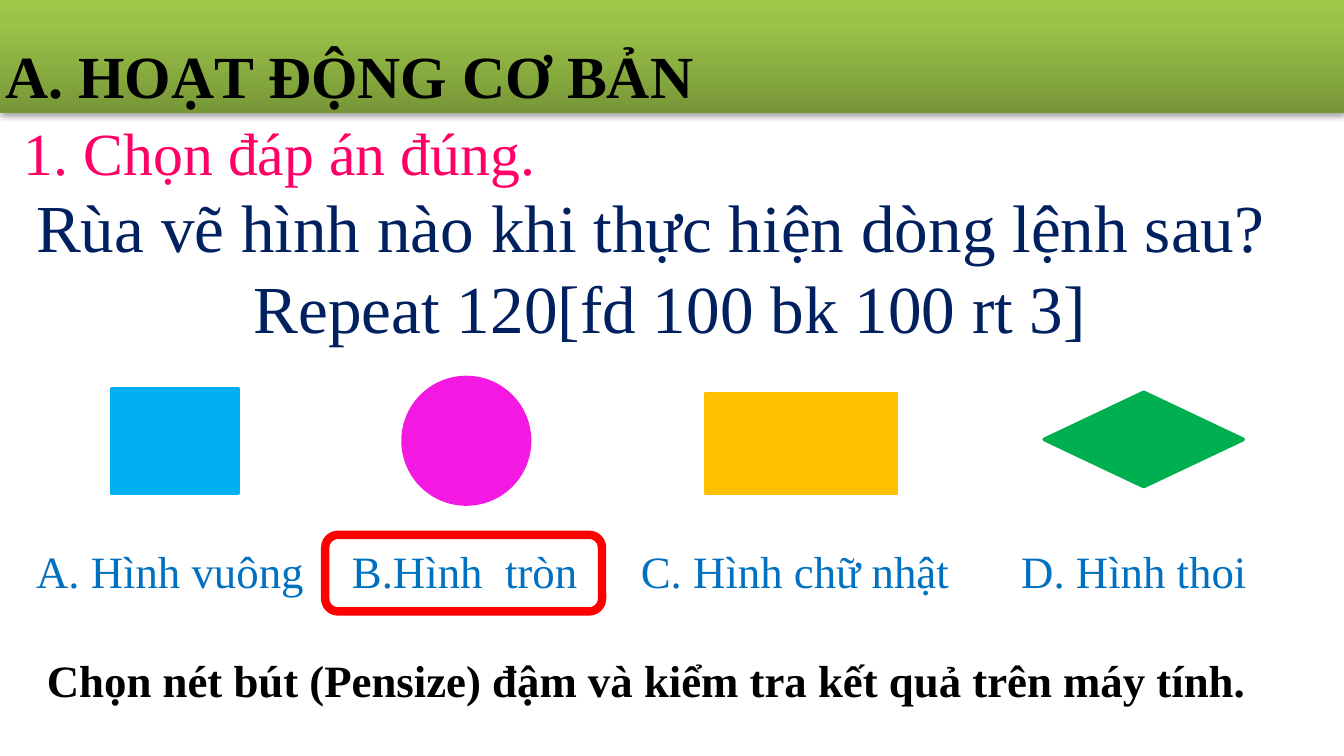
from dataclasses import dataclass

from lxml.etree import SubElement
from pptx import Presentation
from pptx.dml.color import RGBColor
from pptx.enum.shapes import MSO_SHAPE
from pptx.enum.text import MSO_ANCHOR, MSO_AUTO_SIZE, PP_ALIGN
from pptx.oxml import parse_xml
from pptx.oxml.ns import nsdecls, qn
from pptx.util import Inches, Pt


@dataclass(frozen=True)
class Theme:
    font: str = "Times New Roman"
    black: str = "000000"
    pink: str = "FF0066"
    navy: str = "002060"
    answer: str = "0070C0"
    highlight: str = "FF0000"
    square: str = "00B0F0"
    circle: str = "F319E3"
    rectangle: str = "FFC000"
    rhombus: str = "00B050"
    banner_stops: tuple = ((0, "779737"), (80, "9BC348"), (100, "9DC746"))
    heading_size: int = 32
    question_size: int = 36
    body_size: int = 24


THEME = Theme()


def write_text(frame, *lines, size, color, bold=False, line_spacing=None, indents=()):
    """Fill a text frame, one paragraph per line; indents are in inches."""
    for index, line in enumerate(lines):
        paragraph = frame.paragraphs[0] if index == 0 else frame.add_paragraph()
        paragraph.text = line
        paragraph.alignment = PP_ALIGN.LEFT
        if line_spacing:
            paragraph.line_spacing = line_spacing
        if index < len(indents):
            paragraph._p.get_or_add_pPr().set("marL", str(Inches(indents[index])))
        font = paragraph.font
        font.name, font.size, font.bold = THEME.font, Pt(size), bold
        font.color.rgb = RGBColor.from_string(color)


class SlideBuilder:
    def __init__(self, slide, theme):
        self.slide = slide
        self.theme = theme

    def title(self, text, left, top, width, height):
        title = self.slide.shapes.title
        title.left, title.top = Inches(left), Inches(top)
        title.width, title.height = Inches(width), Inches(height)
        frame = title.text_frame
        frame.margin_left = frame.margin_right = Inches(0.04)
        frame.margin_top = frame.margin_bottom = Inches(0.02)
        frame.vertical_anchor = MSO_ANCHOR.TOP
        frame.word_wrap = True
        frame.auto_size = MSO_AUTO_SIZE.SHAPE_TO_FIT_TEXT
        write_text(frame, text, size=self.theme.heading_size,
                   color=self.theme.black, bold=True, line_spacing=1.5)

    def text(self, *lines, left, top, width, height, wrap=True, **text_format):
        box = self.slide.shapes.add_textbox(
            Inches(left), Inches(top), Inches(width), Inches(height))
        box.text_frame.word_wrap = wrap
        box.text_frame.auto_size = MSO_AUTO_SIZE.SHAPE_TO_FIT_TEXT
        write_text(box.text_frame, *lines, **text_format)

    def shape(self, kind, left, top, width, height, fill=None, line=None, weight=2):
        shape = self.slide.shapes.add_shape(
            kind, Inches(left), Inches(top), Inches(width), Inches(height))
        shape.shadow.inherit = False
        if fill:
            shape.fill.solid()
            shape.fill.fore_color.rgb = RGBColor.from_string(fill)
        else:
            shape.fill.background()
        if line:
            shape.line.color.rgb = RGBColor.from_string(line)
            shape.line.width = Pt(weight)
        else:
            shape.line.fill.background()
        return shape

    def banner(self, width, height):
        banner = self.shape(MSO_SHAPE.RECTANGLE, 0, 0, width, height)
        properties = banner.element.spPr
        # Gradient running from the bottom edge to the top
        stops = "".join(
            f'<a:gs pos="{position * 1000}"><a:srgbClr val="{color}"/></a:gs>'
            for position, color in self.theme.banner_stops)
        gradient = parse_xml(
            f'<a:gradFill {nsdecls("a")} rotWithShape="1"><a:gsLst>{stops}</a:gsLst>'
            '<a:lin ang="16200000" scaled="0"/></a:gradFill>')
        properties.replace(properties.find(qn("a:noFill")), gradient)
        # Soft shadow below
        shadow = SubElement(
            properties.find(qn("a:effectLst")), qn("a:outerShdw"),
            blurRad=str(Pt(3.1)), dist=str(Pt(1.8)), dir="5400000", rotWithShape="0")
        color = SubElement(shadow, qn("a:srgbClr"), val=self.theme.black)
        SubElement(color, qn("a:alpha"), val="35000")
        # The title stays in front
        self.slide.shapes.title.element.addprevious(banner.element)


def main():
    # Widescreen, 16 to 9
    presentation = Presentation()
    presentation.slide_width = Inches(10)
    presentation.slide_height = Inches(10 * 9 / 16)
    slide = presentation.slides.add_slide(presentation.slide_layouts[5])
    builder = SlideBuilder(slide, THEME)

    # Heading
    builder.banner(10, 0.84)
    builder.title("A. HOẠT ĐỘNG CƠ BẢN", 0, 0, 6.08, 0.76)

    # Question
    builder.text("1. Chọn đáp án đúng.", left=0.08, top=0.81, width=4.04, height=0.64,
                 wrap=False, size=THEME.heading_size, color=THEME.pink)
    builder.text("Rùa vẽ hình nào khi thực hiện dòng lệnh sau?",
                 "Repeat 120[fd 100 bk 100 rt 3]",
                 left=0.17, top=1.33, width=9.58, height=1.31, indents=(0, 1.62),
                 size=THEME.question_size, color=THEME.navy)

    # Figures to choose from
    figures = (
        (MSO_SHAPE.RECTANGLE, 0.83, 2.89, 0.94, 0.78, THEME.square),
        (MSO_SHAPE.OVAL, 3, 2.81, 0.94, 0.94, THEME.circle),
        (MSO_SHAPE.RECTANGLE, 5.25, 2.93, 1.42, 0.74, THEME.rectangle),
        (MSO_SHAPE.DIAMOND, 7.77, 2.92, 1.48, 0.7, THEME.rhombus),
    )
    for kind, left, top, width, height, color in figures:
        builder.shape(kind, left, top, width, height, fill=color, line=color)

    # Answers
    answers = (
        ("A. Hình vuông", 0.17, 2.21, False),
        ("B.Hình  tròn", 2.52, 1.89, False),
        ("C. Hình chữ nhật", 4.67, 2.51, False),
        ("D. Hình thoi", 7.5, 2.33, True),
    )
    for answer, left, width, wrap in answers:
        builder.text(answer, left=left, top=4, width=width, height=0.5, wrap=wrap,
                     size=THEME.body_size, color=THEME.answer)

    # Frame around the right answer
    builder.shape(MSO_SHAPE.ROUNDED_RECTANGLE, 2.42, 3.98, 2.06, 0.57,
                  line=THEME.highlight, weight=4.5)

    # Closing task
    builder.text("Chọn nét bút (Pensize) đậm và kiểm tra kết quả trên máy tính.",
                 left=0.25, top=4.81, width=9.75, height=0.5,
                 size=THEME.body_size, color=THEME.black, bold=True)

    presentation.save("out.pptx")


if __name__ == "__main__":
    main()
